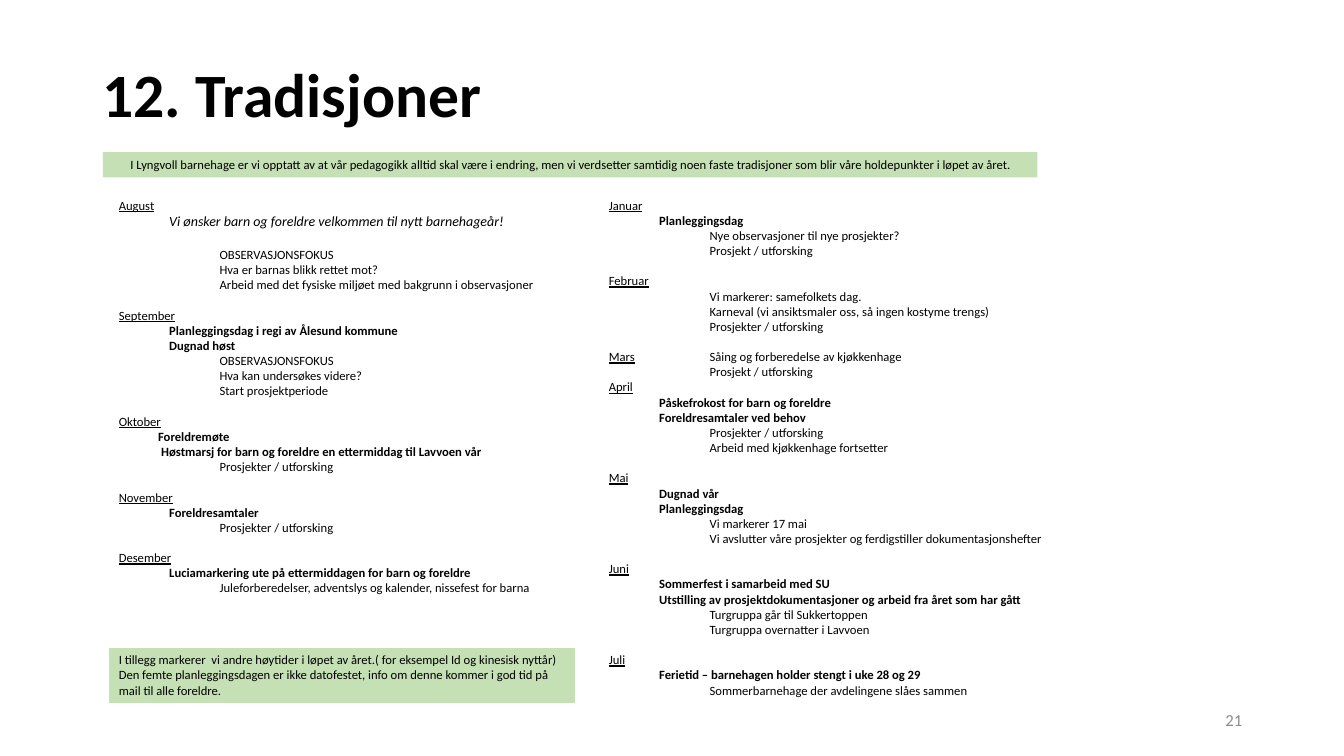
from dataclasses import dataclass

from pptx import Presentation
from pptx.dml.color import RGBColor
from pptx.enum.shapes import MSO_SHAPE
from pptx.enum.text import MSO_ANCHOR, PP_ALIGN
from pptx.util import Inches, Pt

TITLE = "12. Tradisjoner"
PAGE = "21"
INTRO = ["I Lyngvoll barnehage er vi opptatt av at vår pedagogikk alltid skal være i endring, men vi verdsetter "
         "samtidig noen faste tradisjoner som blir våre holdepunkter i løpet av året."]
EXTRA = ["I tillegg markerer  vi andre høytider i løpet av året.( for eksempel Id og kinesisk nyttår)",
         "Den femte planleggingsdagen er ikke datofestet, info om denne kommer i god tid på mail til alle foreldre."]

# Each month: name, events in bold, activities
AUTUMN = [
    ("August", [], ["OBSERVASJONSFOKUS", "Hva er barnas blikk rettet mot?",
                    "Arbeid med det fysiske miljøet med bakgrunn i observasjoner"]),
    ("September", ["Planleggingsdag i regi av Ålesund kommune", "Dugnad høst"],
     ["OBSERVASJONSFOKUS", "Hva kan undersøkes videre?", "Start prosjektperiode"]),
    ("Oktober", ["Foreldremøte", "Høstmarsj for barn og foreldre en ettermiddag til Lavvoen vår"],
     ["Prosjekter / utforsking"]),
    ("November", ["Foreldresamtaler"], ["Prosjekter / utforsking"]),
    ("Desember", ["Luciamarkering ute på ettermiddagen for barn og foreldre"],
     ["Juleforberedelser, adventslys og kalender, nissefest for barna"]),
]
SPRING = [
    ("Januar", ["Planleggingsdag"], ["Nye observasjoner til nye prosjekter?", "Prosjekt / utforsking"]),
    ("Februar", [], ["Vi markerer: samefolkets dag.",
                     "Karneval (vi ansiktsmaler oss, så ingen kostyme trengs)", "Prosjekter / utforsking"]),
    ("Mars\t\tSåing og forberedelse av kjøkkenhage", [], ["Prosjekt / utforsking"]),
    ("April", ["Påskefrokost for barn og foreldre", "Foreldresamtaler ved behov"],
     ["Prosjekter / utforsking", "Arbeid med kjøkkenhage fortsetter"]),
    ("Mai", ["Dugnad vår", "Planleggingsdag"],
     ["Vi markerer 17 mai", "Vi avslutter våre prosjekter og ferdigstiller dokumentasjonshefter"]),
    ("Juni", ["Sommerfest i samarbeid med SU",
              "Utstilling av prosjektdokumentasjoner og arbeid fra året som har gått"],
     ["Turgruppa går til Sukkertoppen", "Turgruppa overnatter i Lavvoen"]),
    ("Juli", ["Ferietid – barnehagen holder stengt i uke 28 og 29"],
     ["Sommerbarnehage der avdelingene slåes sammen"]),
]
WELCOME = "Vi ønsker barn og foreldre velkommen til nytt barnehageår!"
EVENT_INDENTS = {"Oktober": (0.39, 0.42)}
NO_GAP = ("August", "Januar", "April")


@dataclass(frozen=True)
class Theme:
    font: str = "Calibri"
    ink: RGBColor = RGBColor(0, 0, 0)
    grey: RGBColor = RGBColor(0x8C, 0x8C, 0x8C)
    green: RGBColor = RGBColor(0xC5, 0xE0, 0xB4)
    white: RGBColor = RGBColor(255, 255, 255)
    title: float = 44
    body: float = 9
    welcome: float = 10
    page: float = 12
    gap: float = 10.8
    welcome_gap: float = 12.5
    indent: float = 0.5


T = Theme()


def style(p, size=T.body, color=T.ink, bold=False, italic=False):
    for r in p.runs:
        f = r.font
        f.name, f.size, f.bold, f.italic = T.font, Pt(size), bold, italic
        f.color.rgb = color


def text_box(s, box, anchor=MSO_ANCHOR.TOP):
    tf = s.shapes.add_textbox(*map(Inches, box)).text_frame
    tf.word_wrap, tf.vertical_anchor = True, anchor
    return tf


def label(s, box, text, align, **font):
    p = text_box(s, box, MSO_ANCHOR.MIDDLE).paragraphs[0]
    p.text, p.alignment, p.line_spacing = text, align, 0.9
    style(p, **font)


def banner(s, box, lines, align, outlined=False):
    sp = s.shapes.add_shape(MSO_SHAPE.RECTANGLE, *map(Inches, box))
    sp.shadow.inherit = False
    sp.fill.solid()
    sp.fill.fore_color.rgb = T.green
    if outlined:
        sp.line.color.rgb, sp.line.width = T.white, Pt(0.75)
    else:
        sp.line.fill.background()
    tf = sp.text_frame
    tf.word_wrap, tf.vertical_anchor = True, MSO_ANCHOR.TOP
    tf.text = "\n".join(lines)
    for p in tf.paragraphs:
        p.alignment = align
        style(p)


def add_line(tf, text, indent=0, before=0, **font):
    p = tf.paragraphs[0] if not tf.text else tf.add_paragraph()
    p.text, p.space_before = text, Pt(before)
    pPr = p._p.get_or_add_pPr()
    pPr.set("marL", str(Inches(indent)))
    pPr.set("indent", "0")
    style(p, **font)
    return p


def add_month(tf, name, events, activities):
    head, tab, beside = name.partition("\t")
    p = add_line(tf, head, before=0 if head in NO_GAP else T.gap)
    p.runs[0].font.underline = True
    if beside:
        p.add_run().text = tab + beside
        style(p)
    first_gap = 0
    if head == "August":
        add_line(tf, WELCOME, T.indent, size=T.welcome, italic=True)
        first_gap = T.welcome_gap
    indents = EVENT_INDENTS.get(head, (T.indent,) * len(events))
    for event, indent in zip(events, indents):
        add_line(tf, event, indent, bold=True)
    for i, activity in enumerate(activities):
        add_line(tf, activity, 2 * T.indent, before=0 if i else first_gap)


def main():
    prs = Presentation()
    prs.slide_width, prs.slide_height = Inches(13.33), Inches(7.5)
    s = prs.slides.add_slide(prs.slide_layouts[6])
    label(s, (0.92, 0.24, 11.5, 1.45), TITLE, PP_ALIGN.LEFT, size=T.title, bold=True)
    label(s, (9.42, 6.95, 3, 0.4), PAGE, PP_ALIGN.RIGHT, size=T.page, color=T.grey)
    banner(s, (1.02, 1.51, 9.27, 0.25), INTRO, PP_ALIGN.CENTER)
    for box, months in (((1.08, 1.91, 4.33, 4.08), AUTUMN), ((5.94, 1.91, 4.53, 5.25), SPRING)):
        tf = text_box(s, box)
        for month in months:
            add_month(tf, *month)
    banner(s, (1.08, 6.42, 4.63, 0.56), EXTRA, PP_ALIGN.LEFT, outlined=True)
    prs.save("out.pptx")


if __name__ == "__main__":
    main()
